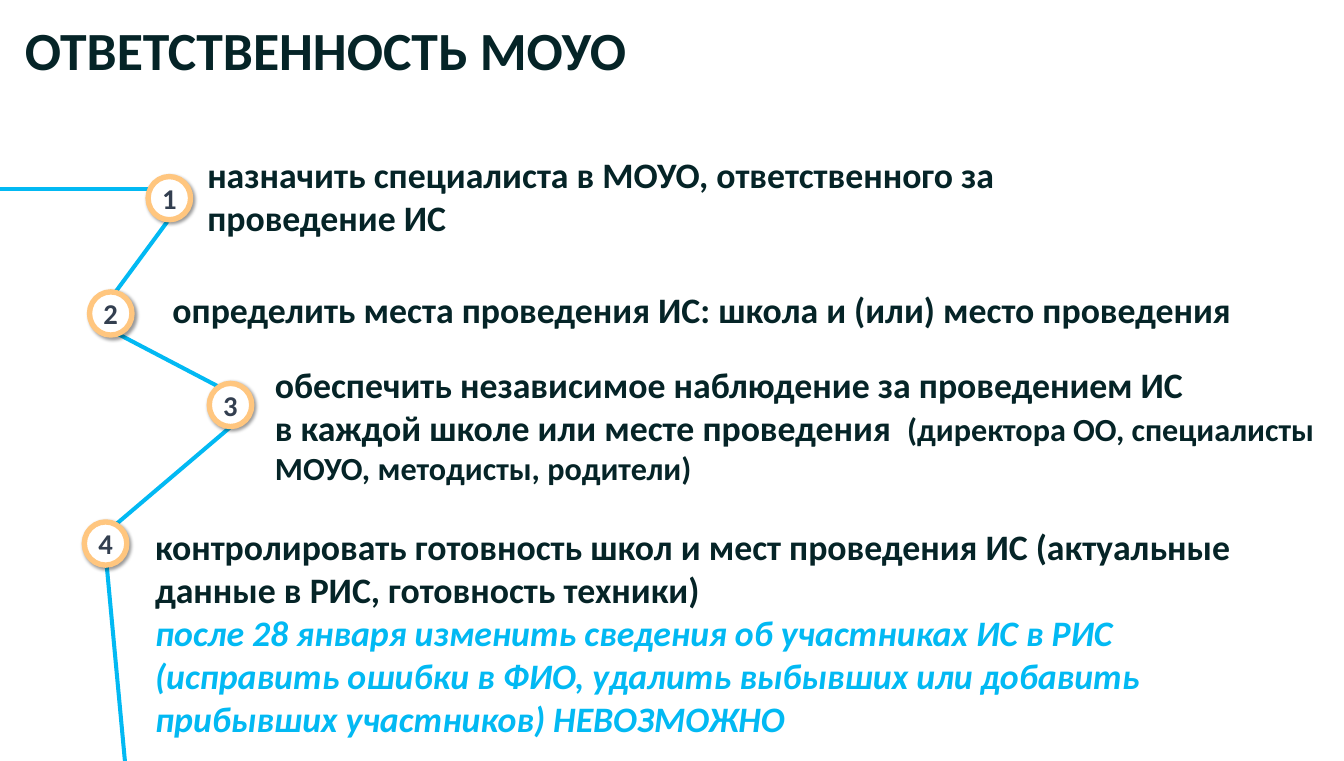
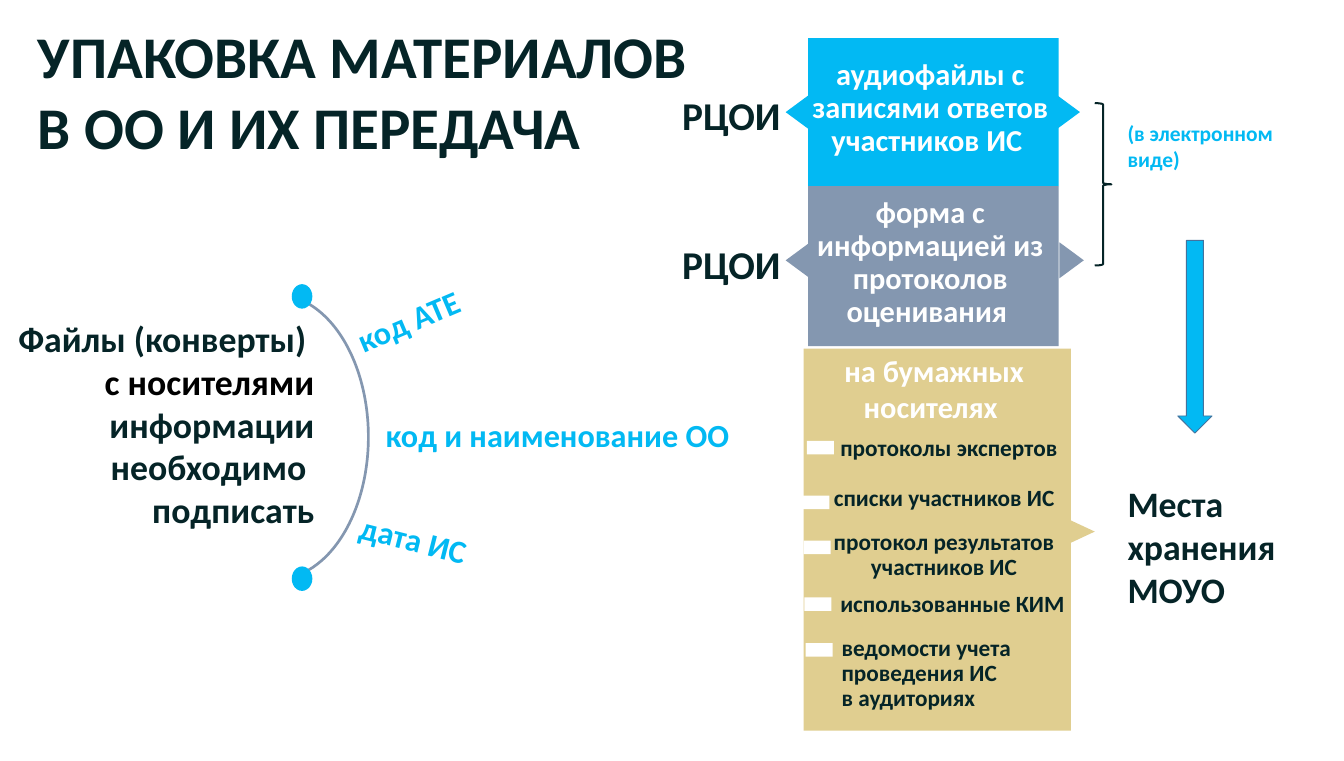
from lxml import etree
from pptx import Presentation
from pptx.dml.color import RGBColor
from pptx.enum.shapes import MSO_CONNECTOR, MSO_SHAPE
from pptx.enum.text import MSO_ANCHOR, PP_ALIGN
from pptx.oxml.ns import qn
from pptx.util import Inches, Pt

RECT, OVAL, TRIANGLE = MSO_SHAPE.RECTANGLE, MSO_SHAPE.OVAL, MSO_SHAPE.ISOSCELES_TRIANGLE
ARC, BRACE, DOWN_ARROW = MSO_SHAPE.ARC, MSO_SHAPE.RIGHT_BRACE, MSO_SHAPE.DOWN_ARROW
STRAIGHT = MSO_CONNECTOR.STRAIGHT
LEFT, CENTER, RIGHT = PP_ALIGN.LEFT, PP_ALIGN.CENTER, PP_ALIGN.RIGHT
TOP, MIDDLE = MSO_ANCHOR.TOP, MSO_ANCHOR.MIDDLE

COLS, ROWS = 20.87, 11.81  # the grid has one-inch cells
FONT = "Calibri"
COLORS = {
    "ink": "052427", "black": "000000", "white": "FFFFFF", "cyan": "02B9F3",
    "slate": "8497B0", "sand": "E0CE90", "ring": "FFC67F", "number": "333F50",
    "edge": "43739E",
}


def rgb(name):
    return RGBColor.from_string(COLORS[name])


class Deck:
    """Holds the shared style and the slide being built."""

    def __init__(self):
        self.prs = Presentation()
        self.prs.slide_width, self.prs.slide_height = Inches(COLS), Inches(ROWS)
        self.slide = None

    def new_slide(self):
        self.slide = self.prs.slides.add_slide(self.prs.slide_layouts[6])

    def fill_text(self, frame, paragraphs, size, color="ink", align=LEFT, spacing=None):
        """Fill a frame; a paragraph is a string or a list of (text, changes) runs."""
        for index, runs in enumerate(paragraphs):
            para = frame.add_paragraph() if index else frame.paragraphs[0]
            para.alignment = align
            if spacing:
                para.line_spacing = spacing
            for words, changes in [(runs, {})] if isinstance(runs, str) else runs:
                run = para.add_run()
                run.text = words
                font = run.font
                font.name, font.bold = FONT, True
                font.size = Pt(changes.get("size", size))
                font.color.rgb = rgb(changes.get("color", color))
                if changes.get("italic"):
                    font.italic = True

    def text(self, box, paragraphs, size, wrap=True, turn=0, **style):
        label = self.slide.shapes.add_textbox(*map(Inches, box))
        label.rotation = turn
        label.text_frame.word_wrap = wrap
        self.fill_text(label.text_frame, paragraphs, size, **style)

    def title(self, box, lines, size):
        self.text(box, lines, size)

    def shape(self, kind, box, fill=None, line=None, width=1, turn=0):
        item = self.slide.shapes.add_shape(kind, *map(Inches, box))
        item.shadow.inherit = False
        item.rotation = turn
        if fill:
            item.fill.solid()
            item.fill.fore_color.rgb = rgb(fill)
        else:
            item.fill.background()
        if line:
            item.line.color.rgb = rgb(line)
            item.line.width = Pt(width)
        else:
            item.line.fill.background()
        return item

    def caption(self, item, paragraphs, size, margins, anchor=MIDDLE, wrap=True, **style):
        """Centred text inside a shape."""
        frame = item.text_frame
        frame.margin_left, frame.margin_top, frame.margin_right, frame.margin_bottom = map(
            Inches, margins)
        frame.vertical_anchor, frame.word_wrap = anchor, wrap
        self.fill_text(frame, paragraphs, size, align=CENTER, **style)

    def line(self, start, end):
        link = self.slide.shapes.add_connector(STRAIGHT, *map(Inches, (*start, *end)))
        link.line.color.rgb = rgb("cyan")
        link.line.width = Pt(4.5)
        etree.SubElement(link._element.spPr, qn("a:effectLst"))

    def badge(self, number, left, top):
        """Numbered ring with a soft shadow."""
        ring = self.shape(OVAL, (left, top, 0.66, 0.67), "white", "ring", 6)
        effects = ring._element.spPr.find(qn("a:effectLst"))
        shadow = etree.SubElement(
            effects, qn("a:outerShdw"), blurRad=str(Pt(4)), dist=str(Pt(3)),
            dir=str(45 * 60000), algn="tl", rotWithShape="0")
        tint = etree.SubElement(shadow, qn("a:srgbClr"), val=COLORS["black"])
        etree.SubElement(tint, qn("a:alpha"), val="40000")
        self.caption(ring, [str(number)], 32, (0, 0, 0, 0), wrap=False, color="number")

    def pointer(self, center_x, center_y, fill, turn, base=0.56, height=0.38):
        box = (center_x - base / 2, center_y - height / 2, base, height)
        self.shape(TRIANGLE, box, fill, turn=turn)


def responsibility_slide(deck):
    deck.new_slide()
    deck.title((0.29, 0.21, 12, 1.11), ["ОТВЕТСТВЕННОСТЬ МОУО"], 60)

    # Winding route behind the numbers
    for start, end in [
        ((0, 2.94), (2.45, 2.94)),
        ((2.76, 3.22), (1.75, 4.59)),
        ((1.75, 5.14), (3.49, 6.05)),
        ((3.74, 6.49), (1.75, 8.18)),
        ((1.65, 8.7), (1.94, ROWS)),
    ]:
        deck.line(start, end)

    # Duties: place of the number, box of the text, paragraphs
    duties = [
        ((2.3, 2.74), (3.12, 2.32, 15.31, 1.45),
         ["назначить специалиста в МОУО, ответственного за проведение ИС"]),
        ((1.39, 4.53), (2.58, 4.42, 17.89, 0.77),
         ["определить места проведения ИС: школа и (или) место проведения"]),
        ((3.25, 5.95), (4.17, 5.58, 16.5, 2.12),
         ["обеспечить независимое наблюдение за проведением ИС",
          [("в каждой школе или месте проведения  ", {}),
           ("(директора ОО, специалисты МОУО, методисты, родители)", {"size": 36})]]),
        ((1.31, 8.1), (2.31, 8.1, 17.9, 3.47),
         ["контролировать готовность школ и мест проведения ИС (актуальные "
          "данные в РИС, готовность техники)",
          [("после 28 января изменить сведения об участниках ИС в РИС "
            "(исправить ошибки в ФИО, удалить выбывших или добавить "
            "прибывших участников) НЕВОЗМОЖНО", {"color": "cyan", "italic": True})]]),
    ]
    for number, (place, box, paragraphs) in enumerate(duties, 1):
        deck.badge(number, *place)
        deck.text(box, paragraphs, 40)


def packing_slide(deck):
    deck.new_slide()
    deck.title((0.49, 0.25, 11.5, 2.32), ["УПАКОВКА МАТЕРИАЛОВ", "В ОО И ИХ ПЕРЕДАЧА"], 66)

    # What to put on the files
    deck.text((0.16, 4.86, 4.82, 3.47), [
        "Файлы (конверты) ",
        [("с носителями ", {"color": "black"}), ("информации необходимо ", {})],
        "подписать",
    ], 40, align=RIGHT)
    bow = deck.shape(ARC, (2.07, 5.34, 4.42, 2.88), line="slate", width=3, turn=90)
    bow.adjustments[0], bow.adjustments[1] = 116.56, 209.01
    for top in (4.44, 8.82):
        deck.shape(OVAL, (4.5, top, 0.38, 0.32), "cyan", turn=90)
    for words, box, turn in [
        ("код АТЕ", (5.4, 4.6, 1.99, 0.71), 337),
        ("код и наименование ОО", (5.89, 6.4, 5.57, 0.71), 0),
        ("дата ИС", (5.48, 8.03, 2.01, 0.71), 14.1),
    ]:
        deck.text(box, [words], 36, wrap=False, turn=turn, color="cyan")

    # Electronic materials, sent both ways
    for top, height, fill, pointer_x, pointer_y, words in [
        (0.59, 2.3, "cyan", 16.58, 1.74, "аудиофайлы с записями ответов участников ИС "),
        (2.89, 2.48, "slate", 16.64, 4.04, "форма с информацией из протоколов оценивания "),
    ]:
        card = deck.shape(RECT, (12.55, top, 3.89, height), fill)
        deck.caption(card, [words], 34, (0, 0, 0.1, 0.1), color="white", spacing=0.9)
        deck.pointer(pointer_x, pointer_y, fill, 90)
        deck.pointer(12.39, pointer_y, fill, 270)
        deck.text((8.52, pointer_y - 0.37, 3.7, 0.84), ["РЦОИ"], 44, align=RIGHT)

    # Paper materials
    paper = deck.shape(RECT, (12.48, 5.41, 4.15, 5.93), "sand")
    deck.caption(paper, ["на бумажных носителях "], 34, (0, 0.05, 0.1, 0), TOP, color="white")
    deck.pointer(16.7, 8.25, "sand", 90, height=0.6)
    for dash_x, dash_y, box, lines, align in [
        (12.53, 6.84, (12.95, 6.72, 3.68, 0.49), ["протоколы экспертов"], LEFT),
        (12.46, 7.69, (12.85, 7.5, 3.78, 0.49), ["списки участников ИС"], LEFT),
        (12.48, 8.39, (12.75, 8.18, 3.82, 0.89),
         ["протокол результатов", "участников ИС"], CENTER),
        (12.49, 9.27, (12.95, 9.14, 3.88, 0.49), ["использованные КИМ"], LEFT),
        (12.51, 9.98, (12.97, 9.82, 3.66, 1.28),
         ["ведомости учета", "проведения ИС", "в аудиториях"], LEFT),
    ]:
        deck.shape(RECT, (dash_x, dash_y, 0.42, 0.21), "white")
        deck.text(box, lines, 26, align=align, spacing=0.9)

    # Where everything is kept
    deck.shape(BRACE, (17, 1.6, 0.26, 2.52), "white", "ink", 2.25)
    deck.text((17.41, 1.81, 2.82, 0.91), ["(в электронном виде)"], 24, color="cyan")
    deck.shape(DOWN_ARROW, (18.29, 3.73, 0.53, 2.99), "cyan", "edge", 1)
    deck.text((17.41, 7.42, 2.82, 2.12), ["Места хранения МОУО"], 40)


def main():
    deck = Deck()
    responsibility_slide(deck)
    packing_slide(deck)
    deck.prs.save("out.pptx")


if __name__ == "__main__":
    main()
